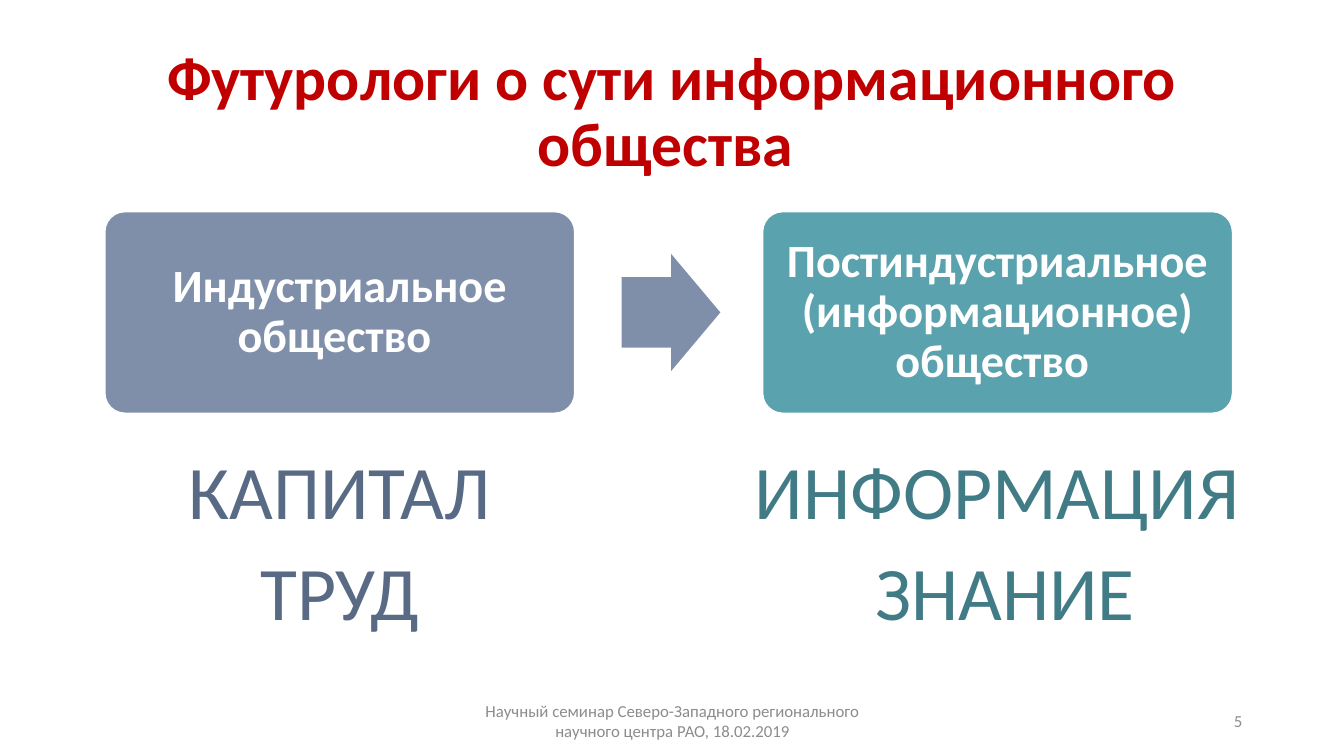
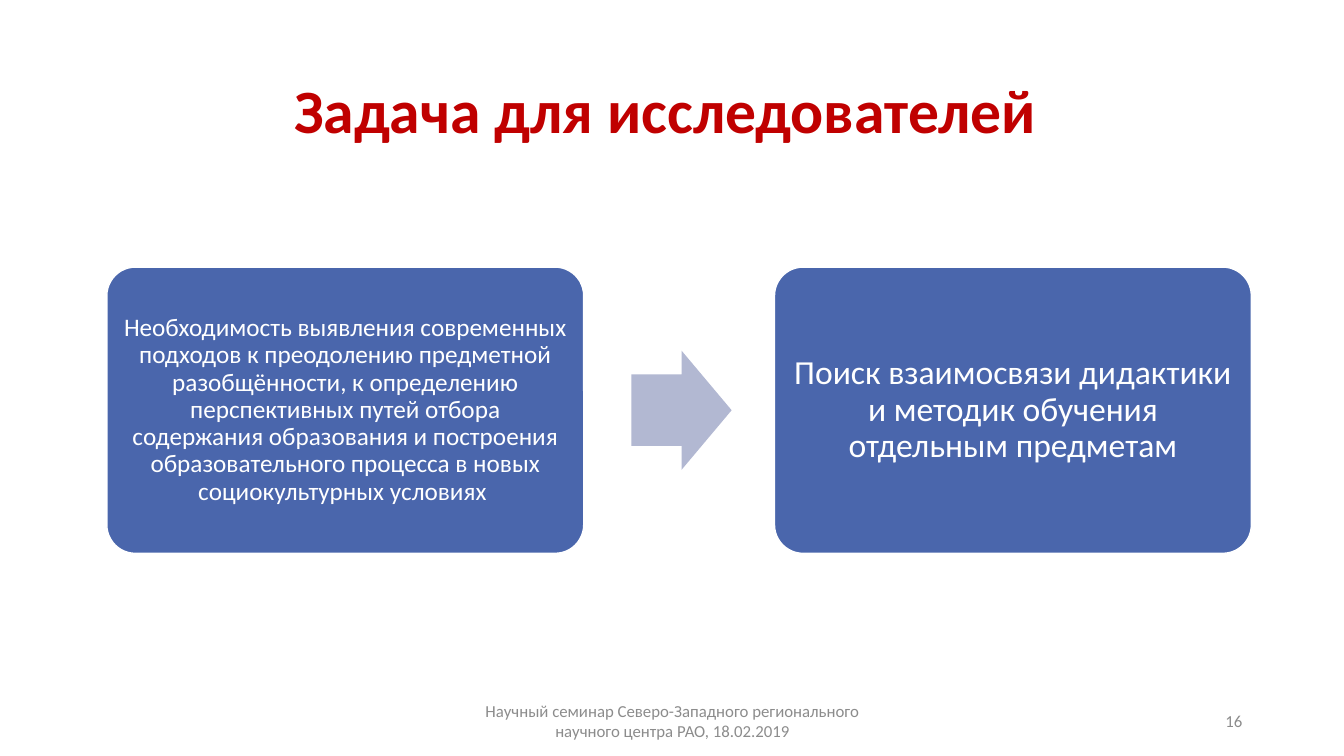
from dataclasses import dataclass

from pptx import Presentation
from pptx.dml.color import RGBColor
from pptx.enum import shapes, text
from pptx.util import Inches, Pt


@dataclass(frozen=True)
class Theme:
    font: str = "Calibri"
    title: str = "C00000"
    footer: str = "8C8C8C"
    white: str = "FFFFFF"
    slate: str = "7F8FA9"
    slate_dark: str = "596A85"
    teal: str = "5AA2AE"
    teal_dark: str = "417B85"
    blue: str = "4A66AC"
    blue_pale: str = "B2B8D2"
    title_size: int = 44
    keyword_size: int = 54
    heading_size: int = 33
    statement_size: int = 24
    detail_size: int = 18
    footer_size: int = 12


THEME = Theme()
SEMINAR = "Научный семинар Северо-Западного регионального научного центра РАО, 18.02.2019"


@dataclass(frozen=True)
class Stage:
    wording: str
    fill: str
    size: int
    inset: float
    bold: bool = False


class Deck:
    def __init__(self, theme):
        self.theme = theme
        self.prs = Presentation()
        self.prs.slide_width = Inches(13.33)
        self.prs.slide_height = Inches(7.5)
        self.slide = None

    def set_text(self, shape, wording, size, color, bold=False,
                 align=text.PP_ALIGN.CENTER, anchor=text.MSO_ANCHOR.MIDDLE,
                 line_spacing=1.0, wrap=True):
        frame = shape.text_frame
        frame.auto_size = text.MSO_AUTO_SIZE.NONE
        frame.word_wrap = wrap
        frame.vertical_anchor = anchor
        paragraph = frame.paragraphs[0]
        paragraph.alignment = align
        paragraph.line_spacing = line_spacing
        run = paragraph.add_run()
        run.text = wording
        run.font.name = self.theme.font
        run.font.size = Pt(size)
        run.font.bold = bold
        run.font.color.rgb = RGBColor.from_string(color)

    def textbox(self, left, top, width, height, *args, **style):
        box = self.slide.shapes.add_textbox(
            Inches(left), Inches(top), Inches(width), Inches(height))
        self.set_text(box, *args, **style)

    def preset(self, kind, left, top, width, height, fill, adjustments):
        shape = self.slide.shapes.add_shape(
            kind, Inches(left), Inches(top), Inches(width), Inches(height))
        shape.shadow.inherit = False
        shape.fill.solid()
        shape.fill.fore_color.rgb = RGBColor.from_string(fill)
        for index, value in enumerate(adjustments):
            shape.adjustments[index] = value
        return shape

    def new_slide(self, title, number):
        """Start a slide with its title, footer and page number."""
        theme = self.theme
        self.slide = self.prs.slides.add_slide(self.prs.slide_layouts[5])
        heading = self.slide.shapes.title
        heading.left, heading.top = Inches(0.92), Inches(0.4)
        heading.width, heading.height = Inches(11.5), Inches(1.45)
        self.set_text(heading, title, theme.title_size, theme.title,
                      bold=True, line_spacing=0.9)
        self.textbox(4.42, 6.95, 4.5, 0.4, SEMINAR, theme.footer_size, theme.footer)
        self.textbox(9.42, 6.95, 3, 0.4, str(number), theme.footer_size,
                     theme.footer, align=text.PP_ALIGN.RIGHT)

    def stage_box(self, stage, left, top, width, height):
        box = self.preset(shapes.MSO_SHAPE.ROUNDED_RECTANGLE,
                          left, top, width, height, stage.fill, [0.1])
        box.line.color.rgb = RGBColor.from_string(self.theme.white)
        box.line.width = Pt(1)
        frame = box.text_frame
        frame.margin_left = frame.margin_right = Inches(stage.inset)
        frame.margin_top = frame.margin_bottom = Inches(stage.inset)
        self.set_text(box, stage.wording, stage.size, self.theme.white,
                      bold=stage.bold, line_spacing=0.9)

    def transition(self, left, top, width, height, before, after, arrow_fill):
        """Two stages and an arrow, spaced in proportion to the stage width."""
        arrow_height = 0.25 * width
        self.stage_box(before, left, top, width, height)
        arrow = self.preset(shapes.MSO_SHAPE.RIGHT_ARROW,
                            left + 1.1 * width, top + (height - arrow_height) / 2,
                            0.21 * width, arrow_height, arrow_fill, [0.6, 0.5])
        arrow.line.fill.background()
        self.stage_box(after, left + 1.4 * width, top, width, height)

    def keyword(self, wording, center, row, color):
        width, pitch = 5.05, 1.01
        self.textbox(center - width / 2, 4.35 + row * pitch, width, pitch,
                     wording, self.theme.keyword_size, color,
                     anchor=text.MSO_ANCHOR.TOP, wrap=False)


def main():
    deck = Deck(THEME)

    deck.new_slide("Футурологи о сути информационного общества ", 5)
    deck.transition(
        1.04, 2.1, 4.66, 2,
        Stage("Индустриальное общество ", THEME.slate, THEME.heading_size, 0.14, True),
        Stage("Постиндустриальное (информационное) общество ",
              THEME.teal, THEME.heading_size, 0.14, True),
        THEME.slate)
    for wording, center, row, color in (
            ("КАПИТАЛ", 3.37, 0, THEME.slate_dark),
            ("ТРУД", 3.37, 1, THEME.slate_dark),
            ("ИНФОРМАЦИЯ", 9.89, 0, THEME.teal_dark),
            ("ЗНАНИЕ", 9.97, 1, THEME.teal_dark)):
        deck.keyword(wording, center, row, color)

    deck.new_slide("Задача для исследователей ", 16)
    deck.transition(
        1.06, 2.65, 4.73, 2.84,
        Stage("Необходимость выявления современных подходов к преодолению "
              "предметной разобщённости, к определению перспективных путей "
              "отбора содержания образования и построения образовательного "
              "процесса в новых социокультурных условиях ",
              THEME.blue, THEME.detail_size, 0.07),
        Stage("Поиск взаимосвязи дидактики и методик обучения отдельным предметам",
              THEME.blue, THEME.statement_size, 0.1),
        THEME.blue_pale)

    deck.prs.save("out.pptx")


if __name__ == "__main__":
    main()
